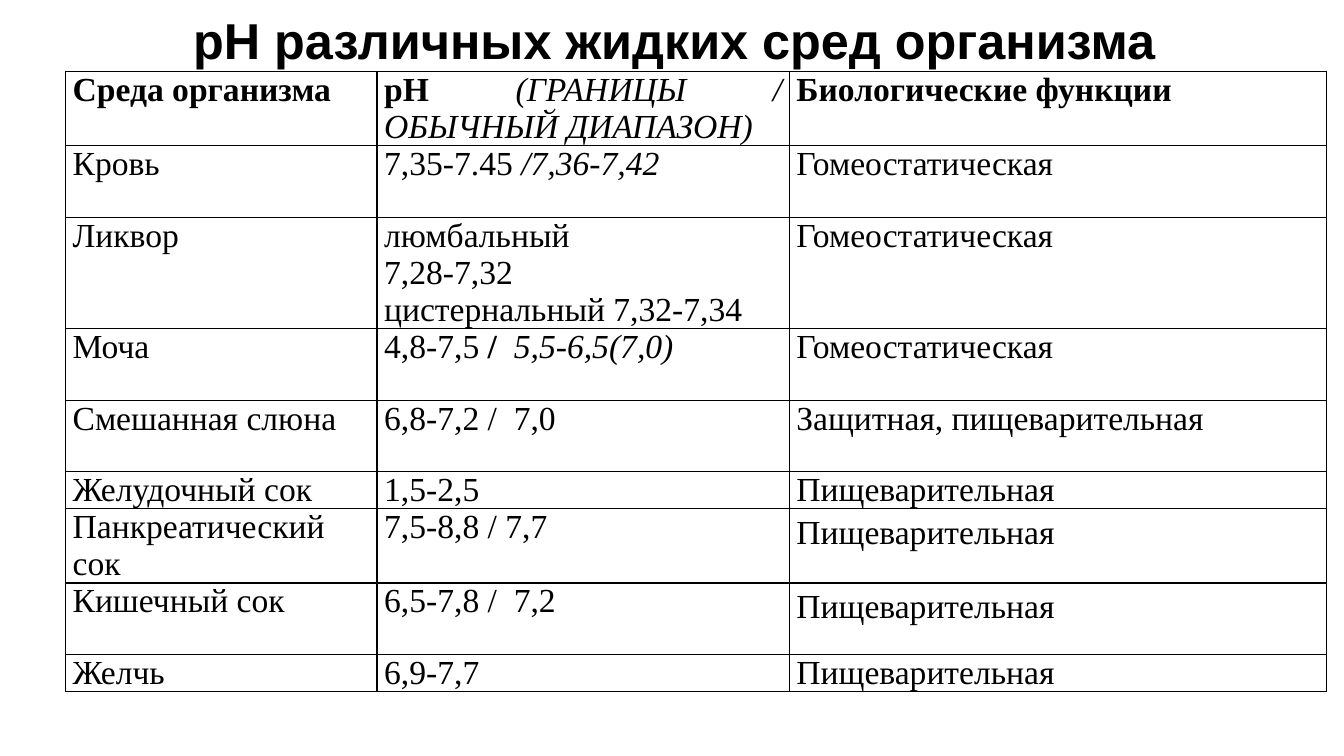
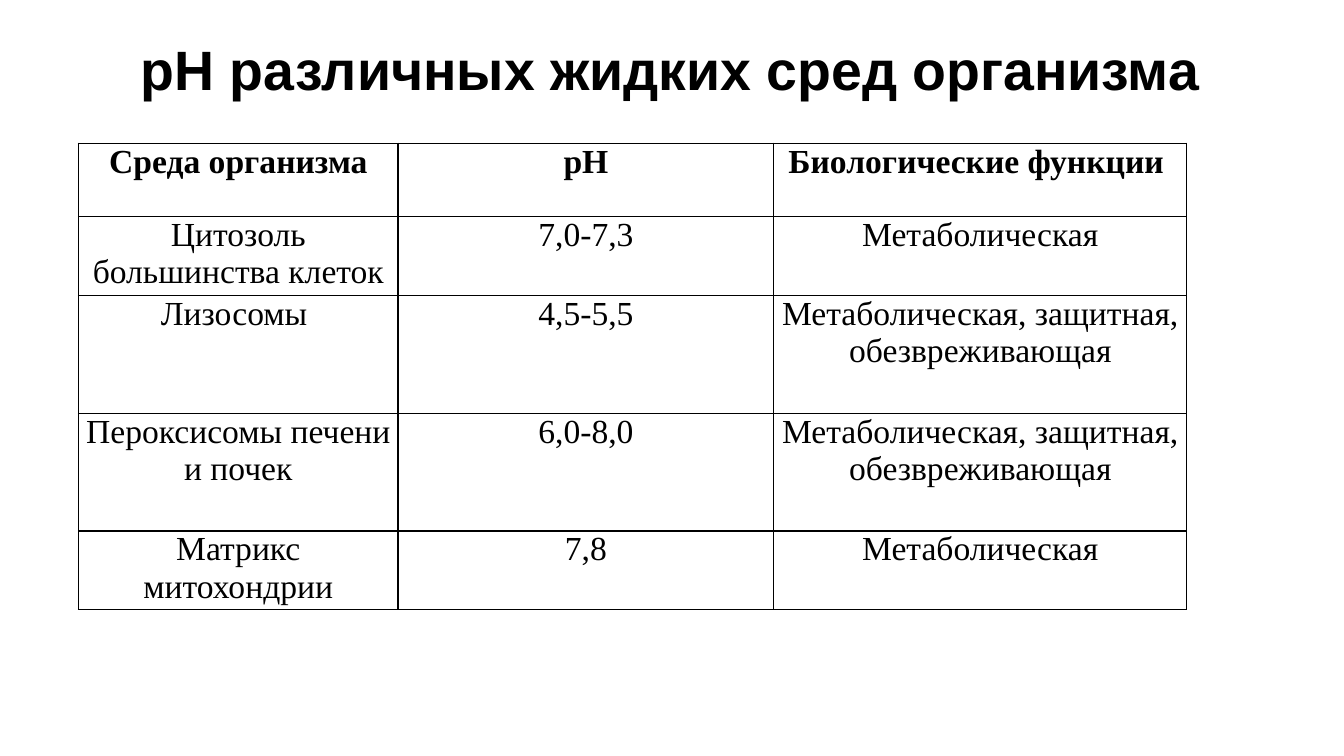
import pptx
import pptx.dml.color
import pptx.enum.text
import pptx.oxml
import pptx.oxml.ns
import pptx.util
from pptx.util import Cm

BLACK = pptx.dml.color.RGBColor(0x00, 0x00, 0x00)
TITLE_FONT = "Arial"
TABLE_FONT = "Times New Roman"
TABLE_SIZE = 24
BORDER_WIDTH = 1
ALIGN = pptx.enum.text.PP_ALIGN

# Content: a cell is a string (one line per paragraph) or a list of (text, style) runs
TITLE = "рН различных жидких сред организма"
HOMEOSTATIC = "Гомеостатическая"
DIGESTIVE = "Пищеварительная"
METABOLIC = "Метаболическая"
PROTECTIVE = "Метаболическая, защитная, обезвреживающая"

SLIDES = [
    {
        "title_box": (2.46, 0.36, 29.08, 1.45),
        "title_size": 36,
        "table_corner": (1.65, 1.8),
        "columns": (7.85, 10.39, 13.54),
        "heights": (1.8, 1.8, 2.8, 1.8, 1.8, 0.92, 1.8, 1.8, 0.92),
        "align": ALIGN.JUSTIFY,
        "loose_cells": {(6, 2), (7, 2)},
        "rows": [
            ("Среда организма",
             [("рН", "bold"), (" (ГРАНИЦЫ / ОБЫЧНЫЙ ДИАПАЗОН)", "italic")],
             "Биологические функции "),
            ("Кровь", [("7,35-7.45 ", ""), ("/7,36-7,42", "italic")], HOMEOSTATIC),
            ("Ликвор", "люмбальный \n7,28-7,32\nцистернальный 7,32-7,34", HOMEOSTATIC),
            ("Моча ",
             [("4,8-7,5 ", ""), ("/  ", "bold"), ("5,5-6,5(7,0)", "italic")],
             HOMEOSTATIC),
            ("Cмешанная слюна", "6,8-7,2 /  7,0", "Защитная, пищеварительная"),
            ("Желудочный сок", "1,5-2,5", DIGESTIVE),
            ("Панкреатический сок", "7,5-8,8 / 7,7", DIGESTIVE),
            ("Кишечный сок", "6,5-7,8 /  7,2", DIGESTIVE),
            ("Желчь", "6,9-7,7", DIGESTIVE),
        ],
    },
    {
        "title_box": (2.26, 1.02, 29.26, 1.6),
        "title_size": 39.6,
        "table_corner": (1.98, 3.61),
        "columns": (8.05, 9.47, 10.41),
        "heights": (1.85, 1.98, 2.97, 2.97, 1.98),
        "align": ALIGN.CENTER,
        "loose_cells": set(),
        "rows": [
            ("Среда организма", "рН", "Биологические функции "),
            ("Цитозоль большинства клеток", "7,0-7,3", METABOLIC),
            ("Лизосомы ", "4,5-5,5", PROTECTIVE),
            ("Пероксисомы печени и почек", "6,0-8,0", PROTECTIVE),
            ("Матрикс митохондрии", "7,8", METABOLIC),
        ],
    },
]


def write_text(frame, text, font, size, bold=False, align=ALIGN.CENTER, spacing=1.0):
    """Fill a text frame with plain lines or with styled runs."""
    if isinstance(text, str):
        style = "bold" if bold else ""
        paragraphs = [[(line, style)] for line in text.split("\n")]
    else:
        paragraphs = [text]
    for index, runs in enumerate(paragraphs):
        paragraph = frame.add_paragraph() if index else frame.paragraphs[0]
        paragraph.alignment = align
        paragraph.line_spacing = spacing
        for words, style in runs:
            run = paragraph.add_run()
            run.text = words
            run.font.name = font
            run.font.size = pptx.util.Pt(size)
            run.font.bold = style == "bold"
            run.font.italic = style == "italic"
            run.font.color.rgb = BLACK


def add_borders(cell):
    """Draw the four sides of a cell; borders come before the fill in the XML."""
    properties = cell._tc.get_or_add_tcPr()
    for position, side in enumerate(("lnL", "lnR", "lnT", "lnB")):
        border = pptx.oxml.parse_xml(
            f'<a:{side} {pptx.oxml.ns.nsdecls("a")} w="{pptx.util.Pt(BORDER_WIDTH)}">'
            f'<a:solidFill><a:srgbClr val="{BLACK}"/></a:solidFill></a:{side}>')
        properties.insert(position, border)


def add_title(slide, content):
    title = slide.shapes.title
    title.left, title.top, title.width, title.height = map(Cm, content["title_box"])
    frame = title.text_frame
    frame.word_wrap = True
    frame.vertical_anchor = pptx.enum.text.MSO_ANCHOR.MIDDLE
    write_text(frame, TITLE, font=TITLE_FONT, size=content["title_size"],
               bold=True, spacing=0.9)


def add_ph_table(slide, content):
    rows, columns, heights = content["rows"], content["columns"], content["heights"]
    left, top = content["table_corner"]
    table = slide.shapes.add_table(
        len(rows), len(columns), Cm(left), Cm(top),
        Cm(sum(columns)), Cm(sum(heights))).table
    table.first_row = table.horz_banding = False
    for column, width in zip(table.columns, columns):
        column.width = Cm(width)
    for row, height in zip(table.rows, heights):
        row.height = Cm(height)

    for row_index, row in enumerate(rows):
        for column_index, text in enumerate(row):
            cell = table.cell(row_index, column_index)
            cell.margin_left = cell.margin_right = Cm(0.18)
            cell.margin_top = cell.margin_bottom = 0
            cell.fill.background()
            add_borders(cell)
            loose = (row_index, column_index) in content["loose_cells"]
            write_text(cell.text_frame, text, font=TABLE_FONT, size=TABLE_SIZE,
                       bold=row_index == 0,
                       align=ALIGN.LEFT if loose else content["align"],
                       spacing=1.15 if loose else 1.0)


def main():
    presentation = pptx.Presentation()
    presentation.slide_width = Cm(33.87)
    presentation.slide_height = Cm(19.05)
    title_only = presentation.slide_layouts[5]
    for content in SLIDES:
        slide = presentation.slides.add_slide(title_only)
        add_title(slide, content)
        add_ph_table(slide, content)
    presentation.save("out.pptx")


if __name__ == "__main__":
    main()
